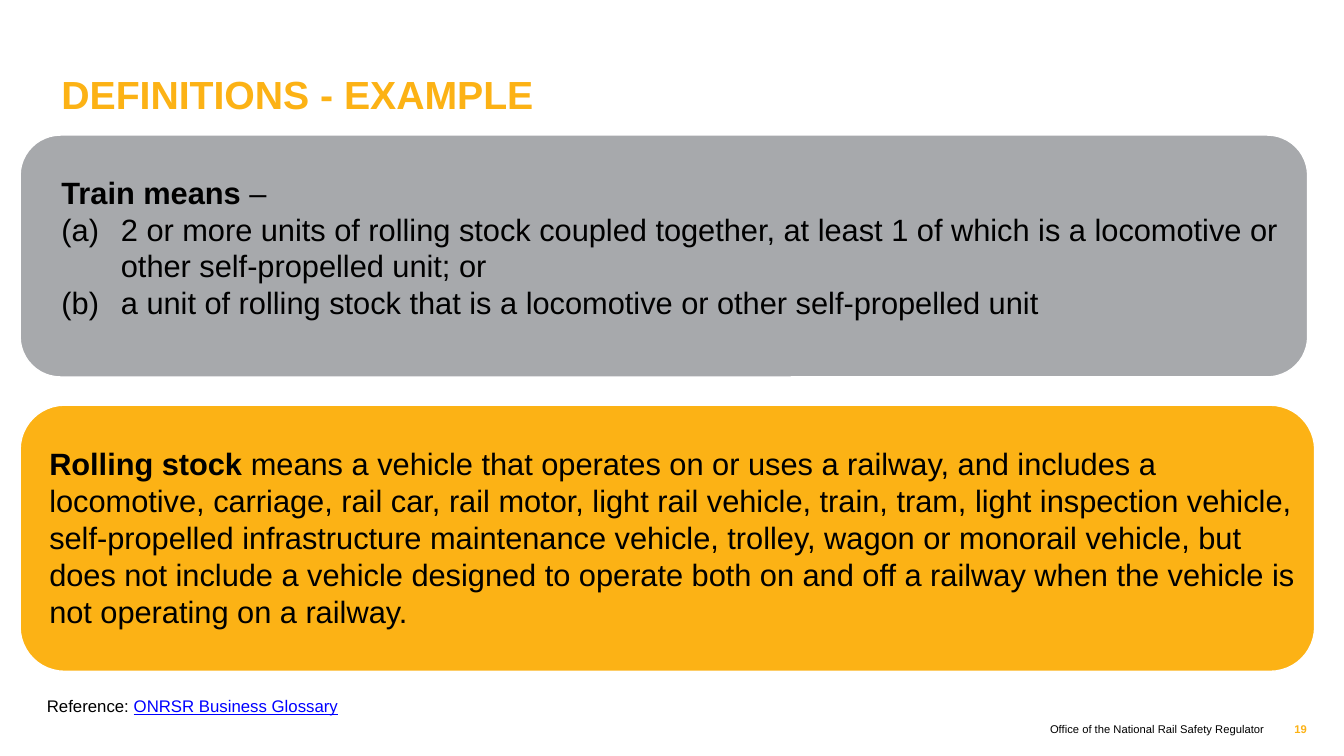
from lxml import etree
from pptx import Presentation
from pptx.dml.color import RGBColor
from pptx.enum.shapes import MSO_SHAPE
from pptx.enum.text import MSO_ANCHOR, PP_ALIGN
from pptx.oxml.ns import qn
from pptx.util import Inches, Pt

ROUND, RECT = MSO_SHAPE.ROUNDED_RECTANGLE, MSO_SHAPE.RECTANGLE
TOP, MID = MSO_ANCHOR.TOP, MSO_ANCHOR.MIDDLE
LEFT, MIDST, RIGHT = PP_ALIGN.LEFT, PP_ALIGN.CENTER, PP_ALIGN.RIGHT
GOLD, GREY, WHITE, BLACK, BLUE = "FCB215", "A7A9AC", "FFFFFF", "000000", "0000FF"

deck = Presentation()
deck.slide_width, deck.slide_height = Inches(13.33), Inches(7.5)
slide = deck.slides.add_slide(deck.slide_layouts[6])


def tint(color, code):
    color.rgb = RGBColor.from_string(code)


def place(share):
    sides = (deck.slide_width, deck.slide_height) * 2
    return [int(side * part / 100) for side, part in zip(sides, share)]


panels = [
    (ROUND, (1.5, 17.87, 95.8, 32), GREY, 1),
    (ROUND, (1.5, 53.6, 96.32, 35.2), GOLD, 1),
    (ROUND, (2.1, 92.67, 24.76, 6), WHITE, 2),
    (RECT, (2.55, 92.93, 23.56, 3.47), WHITE, 0.75),
]
for kind, share, fill, width in panels:
    panel = slide.shapes.add_shape(kind, *place(share))
    panel.shadow.inherit = False
    panel.fill.solid()
    tint(panel.fill.fore_color, fill)
    tint(panel.line.color, WHITE)
    panel.line.width = Pt(width)

head = {"size": Pt(28), "bold": True}
small = {"size": Pt(8), "bold": False}
page = {"size": Pt(8), "bold": True}
term = {"size": Pt(22), "bold": True}
body = {"size": Pt(22), "bold": False}
note = {"size": Pt(12), "bold": False}
link = {"size": Pt(12), "underline": True}

texts = [
    ((3.83, 8, 88.67, 8.8), MID, LEFT, [[("DEFINITIONS - EXAMPLE", GOLD, head)]]),
    ((70.29, 94.13, 24.76, 4.67), MID, RIGHT,
     [[("Office of the National Rail Safety Regulator ", BLACK, small)]]),
    ((94.9, 94.13, 3.08, 4.53), MID, RIGHT, [[("19", GOLD, page)]]),
    ((3.83, 22.27, 92.57, 21.07), TOP, LEFT, [
        [("Train means ", BLACK, term), ("–", BLACK, body)],
        [("2 or more units of rolling stock coupled together, at least 1 of which "
          "is a locomotive or other self-propelled unit; or", BLACK, body)],
        [("a unit of rolling stock that is a locomotive or other "
          "self-propelled unit", BLACK, body)]]),
    ((2.93, 58.13, 95.8, 26), TOP, LEFT, [[
        ("Rolling stock ", BLACK, term),
        ("means a vehicle that operates on or uses a railway, and includes a "
         "locomotive, carriage, rail car, rail motor, light rail vehicle, train, "
         "tram, light inspection vehicle, self-propelled infrastructure maintenance "
         "vehicle, trolley, wagon or monorail vehicle, but does not include a "
         "vehicle designed to operate both on and off a railway when the vehicle "
         "is not operating on a railway.", BLACK, body)]]),
    ((2.1, 91.33, 24.46, 4), MID, MIDST,
     [[("Reference: ", BLACK, note), ("ONRSR Business Glossary", BLUE, link)]]),
]
for share, anchor, align, paras in texts:
    frame = slide.shapes.add_textbox(*place(share)).text_frame
    frame.word_wrap = True
    frame.vertical_anchor = anchor
    for row, runs in enumerate(paras):
        para = frame.add_paragraph() if row else frame.paragraphs[0]
        para.alignment = align
        if row:
            props = para._p.get_or_add_pPr()
            props.set("marL", str(Inches(0.59)))
            props.set("indent", str(-Inches(0.59)))
            mark = etree.SubElement(props, qn("a:buAutoNum"))
            mark.set("type", "alphaLcParenBoth")
        for words, code, form in runs:
            run = para.add_run()
            run.text = words
            run.font.name = "Arial"
            tint(run.font.color, code)
            for key, value in form.items():
                setattr(run.font, key, value)

deck.save("out.pptx")
